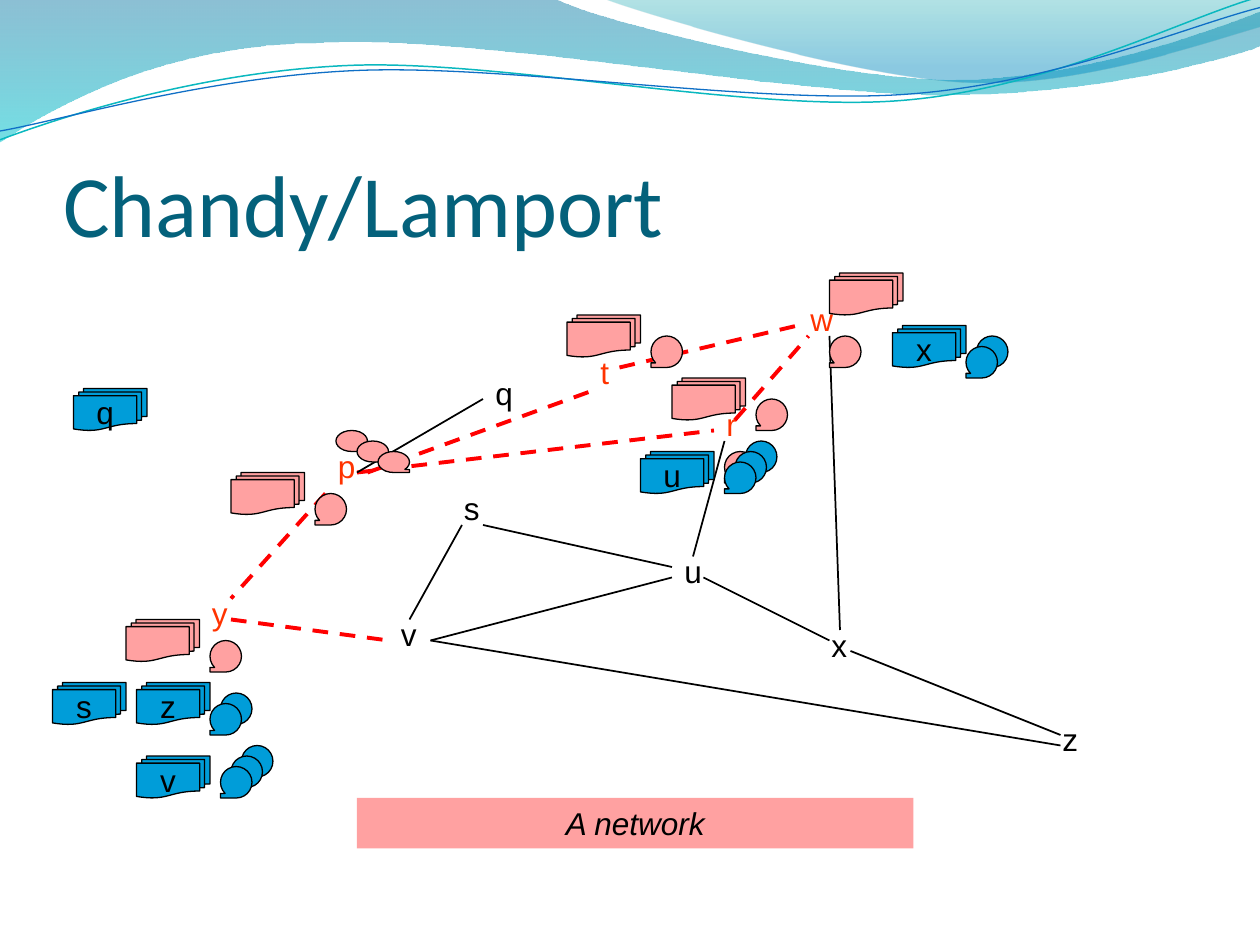
from dataclasses import dataclass
from lxml.etree import SubElement
from pptx import Presentation
from pptx.dml.color import RGBColor
from pptx.enum.dml import MSO_LINE
from pptx.enum.shapes import MSO_CONNECTOR as Connector, MSO_SHAPE as Preset
from pptx.enum.text import MSO_ANCHOR as Anchor, MSO_AUTO_SIZE as Fit, PP_ALIGN as Align
from pptx.oxml.ns import qn
from pptx.util import Pt


@dataclass(frozen=True)
class Theme:
    title: str = "04617B"
    ink: str = "000000"
    marked: str = "FF3300"
    tree: str = "FF0000"
    pink: str = "FFA1A1"
    blue: str = "009DD9"
    teal_wave: str = "0AB8BF"
    blue_wave: str = "0F6FC6"
    title_font: str = "Calibri"
    body_font: str = "Arial"
    title_size: float = 50
    body_size: float = 18


THEME = Theme()
TITLE = "Chandy/Lamport"
CAPTION = "A network"

BANDS = [
    ([(0, -0.72), (316.8, -0.72),
      [(342.72, 12.24), (478.08, 45.36), (545.76, 45.36)],
      [(614.16, 45.36), (689.76, 18.72), (720, 6.48)], (720.72, 25.92),
      [(707.76, 31.68), (626.4, 54.72), (537.12, 54)],
      [(447.84, 54), (275.04, 20.16), (185.04, 24.48)],
      [(92.88, 25.2), (33.12, 59.76), (-0.72, 81.36)]],
     [(0, "0074A1", 45), (1, "00C6CF", 55)]),
    ([(344.88, -0.72),
      [(366.48, 7.92), (491.04, 44.64), (553.68, 46.8)],
      [(616.32, 49.68), (691.92, 23.04), (720, 15.12)], (720, 0)],
     [(0, "00A1A9", 30), (0.8, "008BBF", 45)]),
]
WAVES = [
    ([(0, 79.92),
      [(34.56, 66.96), (113.76, 41.04), (199.44, 37.44)],
      [(284.4, 33.84), (426.96, 64.08), (513.36, 57.6)],
      [(599.76, 51.12), (675.36, 10.8), (718.56, -1.44)]], THEME.teal_wave, 0.85),
    ([(0, 74.88),
      [(33.84, 69.12), (118.08, 43.92), (203.76, 40.32)],
      [(290.16, 36.72), (429.84, 59.76), (516.24, 54)],
      [(601.92, 48.24), (677.52, 15.12), (720, 4.32)]], THEME.blue_wave, 0.75),
]

NODES = {
    "p": (186, 252), "q": (276, 210), "r": (408, 228), "s": (258, 276),
    "t": (336, 198), "u": (384, 312), "v": (222, 348), "w": (456, 168),
    "x": (468, 354), "y": (114, 336), "z": (600, 408),
}
MARKED_NODES = "prtwy"
TREE_EDGES = [
    (186, 282, 132, 342), (132, 354, 222, 366), (204, 270, 408, 246),
    (210, 270, 342, 222), (420, 240, 462, 192), (354, 210, 456, 186),
]
PLAIN_EDGES = [
    (264, 300, 234, 354), (204, 270, 276, 228), (414, 252, 396, 318),
    (246, 366, 606, 426), (246, 366, 384, 330), (474, 192, 480, 360),
    (402, 330, 474, 366), (276, 300, 384, 324), (486, 372, 606, 420),
]
PINK_DOCUMENTS = [(132, 270), (72, 354), (324, 180), (384, 216), (474, 156)]
PINK_TAPES = [(180, 282), (120, 366), (372, 192), (432, 228), (414, 258), (474, 192)]
BLUE_DOCUMENTS = [
    ("q", 42, 222), ("v", 78, 432), ("z", 78, 390),
    ("x", 510, 186), ("u", 366, 258), ("s", 30, 390),
]
BLUE_TAPE_STACKS = [(138, 426, 3), (126, 396, 2), (558, 192, 2), (426, 252, 3)]

deck = Presentation()
deck.slide_width, deck.slide_height = Pt(720), Pt(540)
page = deck.slides.add_slide(deck.slide_layouts[6])


def color(value):
    return RGBColor.from_string(value)


def write(box, text, tint=THEME.ink, size=THEME.body_size, font=THEME.body_font,
          align=Align.LEFT, italic=False):
    para = box.text_frame.paragraphs[0]
    para.alignment = align
    span = para.add_run()
    span.text = text
    span.font.name, span.font.size = font, Pt(size)
    span.font.italic = italic
    span.font.color.rgb = color(tint)


def text_box(left, top, width, height):
    box = page.shapes.add_textbox(Pt(left), Pt(top), Pt(width), Pt(height))
    box.text_frame.word_wrap = True
    return box


def freeform(outline, close):
    anchors = [part[-1] if isinstance(part, list) else part for part in outline]
    start, *others = [(Pt(x), Pt(y)) for x, y in anchors]
    builder = page.shapes.build_freeform(*start)
    builder.add_line_segments(others, close=close)
    shape = builder.convert_to_shape()
    shape.shadow.inherit = False
    segments = list(shape._element.spPr.iter(qn("a:lnTo")))
    for segment, part in zip(segments, outline[1:]):
        if isinstance(part, list):
            curve = SubElement(segment.getparent(), qn("a:cubicBezTo"))
            for x, y in part:
                SubElement(curve, qn("a:pt"), x=str(Pt(x) - shape.left),
                           y=str(Pt(y) - shape.top))
            segment.getparent().replace(segment, curve)
    return shape


def band(outline, stops):
    shape = freeform(outline, True)
    shape.line.fill.background()
    shape.fill.gradient()
    shape.fill.gradient_angle = 270
    for stop, (position, tint, _) in zip(shape.fill.gradient_stops, stops):
        stop.position, stop.color.rgb = position, color(tint)
    for node, (_, _, opacity) in zip(shape._element.spPr.iter(qn("a:srgbClr")), stops):
        SubElement(node, qn("a:alpha")).set("val", str(opacity * 1000))


def wave(outline, tint, width):
    shape = freeform(outline, False)
    shape.fill.background()
    shape.line.color.rgb, shape.line.width = color(tint), Pt(width)


def edge(ends, tint, width, dash=None):
    line = page.shapes.add_connector(Connector.STRAIGHT, *map(Pt, ends))
    line.line.color.rgb, line.line.width = color(tint), Pt(width)
    if dash:
        line.line.dash_style = dash
    SubElement(line._element.spPr, qn("a:effectLst"))


def solid(preset, left, top, width, height, tint, outlined=True):
    shape = page.shapes.add_shape(preset, Pt(left), Pt(top), Pt(width), Pt(height))
    shape.shadow.inherit = False
    shape.fill.solid()
    shape.fill.fore_color.rgb = color(tint)
    if outlined:
        shape.line.color.rgb, shape.line.width = color(THEME.ink), Pt(0.75)
    else:
        shape.line.fill.background()
    return shape


def document(left, top, tint):
    return solid(Preset.FLOWCHART_MULTIDOCUMENT, left, top, 42, 24, tint)


def tape(left, top, tint, height=18, flip=True):
    shape = solid(Preset.FLOWCHART_SEQUENTIAL_ACCESS_STORAGE, left, top, 18, height, tint)
    if flip:
        shape._element.spPr.xfrm.set("flipH", "1")


for outline, stops in BANDS:
    band(outline, stops)
for outline, tint, width in WAVES:
    wave(outline, tint, width)

heading = text_box(36, 55.44, 653.76, 90)
frame = heading.text_frame
frame.margin_left = frame.margin_right = frame.margin_bottom = 0
frame.vertical_anchor = Anchor.BOTTOM
write(heading, TITLE, THEME.title, THEME.title_size, THEME.title_font)

for name, (left, top) in NODES.items():
    label = text_box(left, top, 30, 28.8)
    label.text_frame.auto_size = Fit.SHAPE_TO_FIT_TEXT
    write(label, name, THEME.marked if name in MARKED_NODES else THEME.ink)
for ends in TREE_EDGES:
    edge(ends, THEME.tree, 2.25, MSO_LINE.DASH)
for ends in PLAIN_EDGES:
    edge(ends, THEME.ink, 1)

caption = solid(Preset.RECTANGLE, 204, 456, 318, 28.8, THEME.pink, outlined=False)
caption.text_frame.vertical_anchor = Anchor.TOP
write(caption, CAPTION, align=Align.CENTER, italic=True)

for left, top in PINK_DOCUMENTS:
    document(left, top, THEME.pink)
for index in range(3):
    tape(192 + 12 * index, 246 + 6 * index, THEME.pink, height=12, flip=False)
for left, top in PINK_TAPES:
    tape(left, top, THEME.pink)
for name, left, top in BLUE_DOCUMENTS:
    packet = document(left, top, THEME.blue)
    packet.text_frame.word_wrap = False
    packet.text_frame.vertical_anchor = Anchor.MIDDLE
    write(packet, name, align=Align.CENTER)
for left, top, count in BLUE_TAPE_STACKS:
    for index in range(count):
        tape(left - 6 * index, top + 6 * index, THEME.blue)

deck.save("out.pptx")
